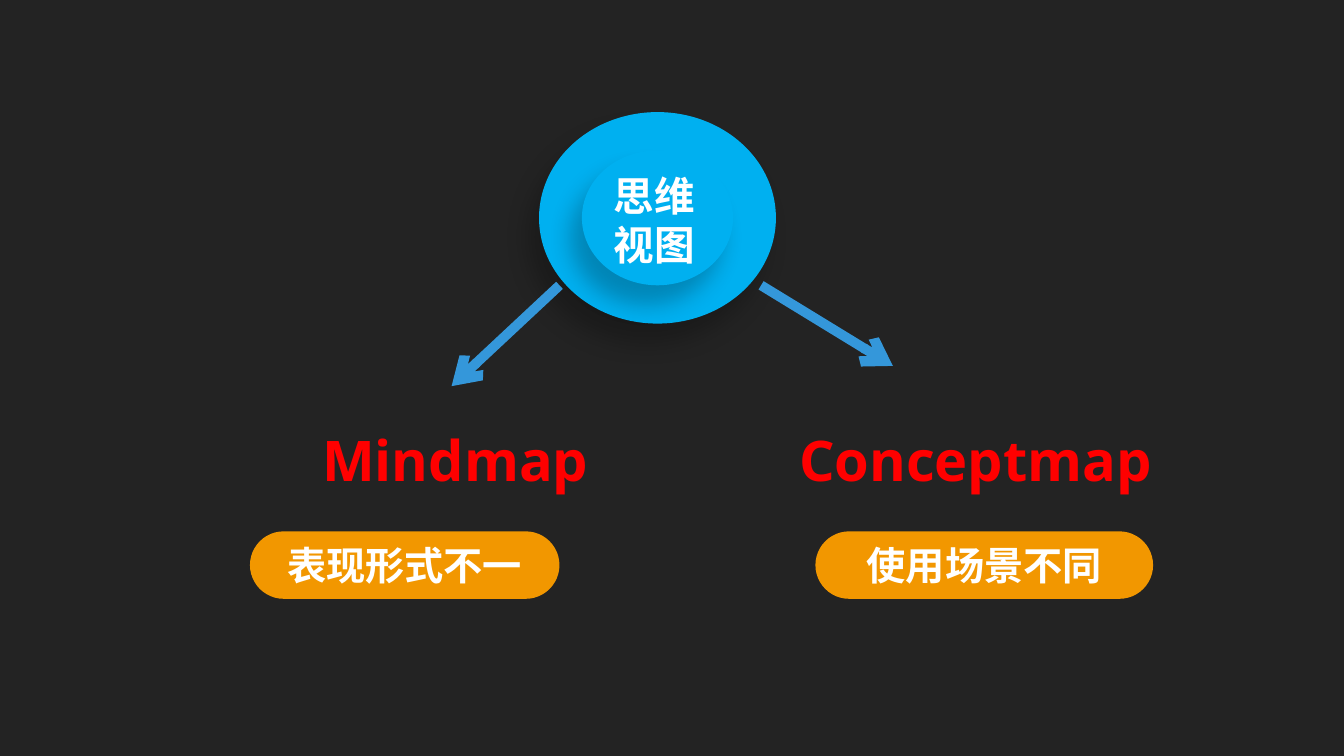
"""Build the slide that splits thinking views into two kinds of map."""
from lxml import etree
from pptx import Presentation
from pptx.dml.color import RGBColor
from pptx.enum import shapes, text
from pptx.oxml import ns
from pptx.util import Cm, Pt

HUB = "思维\n视图"
CENTER = (16.57, 5.49)
DISCS = [(5.97, 5.33), (3.81, 3.4)]
BRANCHES = [
    {"name": "Mindmap", "name_box": (7.87, 7.26), "note": "表现形式不一",
     "note_box": (6.3, 7.8), "arrow": (14.1, 7.19, 11.38, 9.73)},
    {"name": "Conceptmap", "name_box": (19.89, 9.8), "note": "使用场景不同",
     "note_box": (20.55, 8.51), "arrow": (19.18, 7.19, 22.5, 9.22)},
]
DARK, SKY, BLUE = "232323", "00B0F0", "3497DA"
ORANGE, RED, WHITE = "F29700", "FF0000", "FFFFFF"


def paint(color, value):
    """Set a colour from a hex string."""
    color.rgb = RGBColor.from_string(value)


def fill(shape, value):
    """Give a shape a plain fill with no line or shadow."""
    shape.shadow.inherit = False
    shape.fill.solid()
    paint(shape.fill.fore_color, value)
    shape.line.fill.background()


def place(shape, *box):
    """Move and size a shape in centimetres."""
    shape.left, shape.top, shape.width, shape.height = map(Cm, box)


def write(shape, words, size, color, align, wrap):
    """Put bold text in a shape."""
    frame = shape.text_frame
    frame.text = words
    frame.word_wrap = wrap
    frame.vertical_anchor = text.MSO_ANCHOR.MIDDLE if wrap else text.MSO_ANCHOR.TOP
    if not wrap:
        frame.auto_size = text.MSO_AUTO_SIZE.SHAPE_TO_FIT_TEXT
    for para in frame.paragraphs:
        para.alignment = align
        for run in para.runs:
            run.font.name = "Open Sans"
            run.font.size = Pt(size)
            run.font.bold = True
            paint(run.font.color, color)


def add(parent, tag, **values):
    """Append a drawing element."""
    return etree.SubElement(parent, ns.qn(tag), **values)


def disc(slide, wide, high):
    """Draw a centred disc with a soft shadow at the lower left."""
    x, y = CENTER
    oval = slide.shapes.add_shape(
        shapes.MSO_SHAPE.OVAL, Cm(x - wide / 2), Cm(y - high / 2), Cm(wide), Cm(high))
    fill(oval, SKY)
    effects = oval._element.spPr.find(ns.qn("a:effectLst"))
    shade = add(effects, "a:outerShdw", blurRad=str(Pt(17)), dist=str(Pt(16)),
                dir=str(120 * 60000), algn="ctr", rotWithShape="0")
    black = add(shade, "a:srgbClr", val="000000")
    add(black, "a:alpha", val="24000")


def arrow(slide, ends):
    """Draw a thick line with an open arrowhead."""
    link = slide.shapes.add_connector(shapes.MSO_CONNECTOR.STRAIGHT, *map(Cm, ends))
    paint(link.line.color, BLUE)
    link.line.width = Pt(7)
    add(link.line._get_or_add_ln(), "a:tailEnd", type="arrow")
    add(link._element.spPr, "a:effectLst")


def branch(slide, item):
    """Draw one arrow with its name and note."""
    arrow(slide, item["arrow"])
    left, wide = item["name_box"]
    name = slide.shapes.add_textbox(Cm(left), Cm(10.59), Cm(wide), Cm(1.96))
    write(name, item["name"], 40, RED, text.PP_ALIGN.LEFT, False)
    left, wide = item["note_box"]
    pill = slide.shapes.add_shape(
        shapes.MSO_SHAPE.ROUNDED_RECTANGLE, Cm(left), Cm(13.39), Cm(wide), Cm(1.7))
    pill.adjustments[0] = 0.5
    fill(pill, ORANGE)
    write(pill, item["note"], 28, WHITE, text.PP_ALIGN.CENTER, True)


def main():
    """Build and save the deck."""
    deck = Presentation()
    deck.slide_width, deck.slide_height = Cm(33.87), Cm(19.05)
    slide = deck.slides.add_slide(deck.slide_layouts[5])
    slide.background.fill.solid()
    paint(slide.background.fill.fore_color, DARK)
    for size in DISCS:
        disc(slide, *size)
    title = slide.shapes.title
    place(title, 15.21, 4.19, 2.57, 2.74)
    write(title, HUB, 29, WHITE, text.PP_ALIGN.LEFT, False)
    slide.shapes._spTree.append(title._element)
    for item in BRANCHES:
        branch(slide, item)
    deck.save("out.pptx")


if __name__ == "__main__":
    main()
